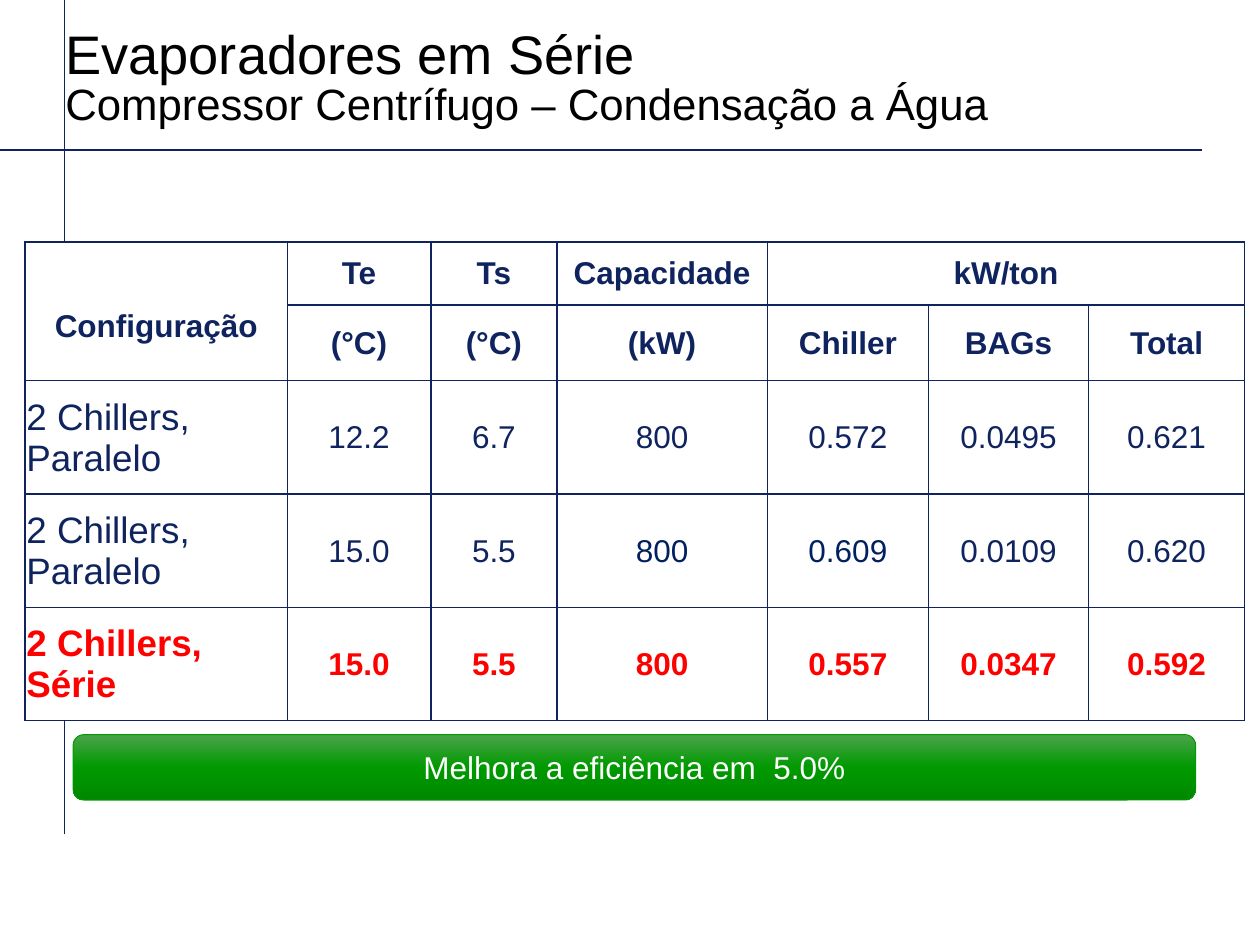
from lxml import etree
from pptx import Presentation
from pptx.dml.color import RGBColor
from pptx.enum.shapes import MSO_CONNECTOR, MSO_SHAPE
from pptx.enum.text import MSO_ANCHOR as Anchor, PP_ALIGN as Align
from pptx.oxml import parse_xml
from pptx.oxml.ns import nsdecls, qn
from pptx.util import Inches, Pt

COLORS = {
    "navy": "0F245F",
    "deep_navy": "002060",
    "red": "FF0000",
    "black": "000000",
    "white": "FFFFFF",
    "green_light": "4BA44B",
    "green": "009900",
    "green_dark": "008800",
}
FONT = "Arial"
COLUMN_WIDTHS = [2.08, 1.14, 1, 1.67, 1.28, 1.27, 1.24]
ROW_HEIGHTS = [0.5, 0.46, 0.9, 0.9, 0.9]
HEADER_ROWS = 2
ROWS = [
    ["Configuração", "Te", "Ts", "Capacidade", "kW/ton", "", ""],
    ["", "(°C)", "(°C)", "(kW)", "Chiller", "BAGs", "Total"],
    ["2 Chillers, Paralelo", "12.2", "6.7", "800", "0.572", "0.0495", "0.621"],
    ["2 Chillers, Paralelo", "15.0", "5.5", "800", "0.609", "0.0109", "0.620"],
    ["2 Chillers,\nSérie", "15.0", "5.5", "800", "0.557", "0.0347", "0.592"],
]
DEEP_NAVY_CELLS = {(3, 3), (3, 4)}


def rgb(name):
    return RGBColor.from_string(COLORS[name])


def set_font(font, size, color, bold=False):
    font.name = FONT
    font.size = Pt(size)
    font.bold = bold
    font.color.rgb = rgb(color)


def add_rule(slide, x1, y1, x2, y2):
    rule = slide.shapes.add_connector(
        MSO_CONNECTOR.STRAIGHT, Inches(x1), Inches(y1), Inches(x2), Inches(y2))
    rule.line.color.rgb = rgb("navy")
    rule.line.width = Pt(0.75)
    etree.SubElement(rule._element.spPr, qn("a:effectLst"))


def add_title(slide, heading, subheading):
    box = slide.shapes.add_textbox(Inches(0.42), Inches(0.08), Inches(7.75), Inches(1))
    frame = box.text_frame
    frame.word_wrap = True
    frame.vertical_anchor = Anchor.BOTTOM
    paragraph = frame.paragraphs[0]
    paragraph.line_spacing = 0.85
    run = paragraph.add_run()
    run.text = heading
    set_font(run.font, 31, "black")
    paragraph.add_line_break()
    run = paragraph.add_run()
    run.text = subheading
    set_font(run.font, 25, "black")


def add_borders(cell):
    properties = cell._tc.get_or_add_tcPr()
    for index, side in enumerate("LRTB"):
        properties.insert(index, parse_xml(
            f'<a:ln{side} {nsdecls("a")} w="12700"><a:solidFill>'
            f'<a:srgbClr val="{COLORS["navy"]}"/></a:solidFill></a:ln{side}>'))


def fill_cell(cell, text, size, color, bold, align):
    cell.fill.solid()
    cell.fill.fore_color.rgb = rgb("white")
    add_borders(cell)
    cell.margin_left = cell.margin_right = cell.margin_top = Inches(0.01)
    cell.margin_bottom = 0
    cell.vertical_anchor = Anchor.MIDDLE
    cell.text = text
    for paragraph in cell.text_frame.paragraphs:
        paragraph.alignment = align
        set_font(paragraph.font, size, color, bold)


def add_comparison_table(slide):
    table = slide.shapes.add_table(
        len(ROWS), len(COLUMN_WIDTHS), Inches(0.2), Inches(1.92),
        Inches(sum(COLUMN_WIDTHS)), Inches(sum(ROW_HEIGHTS))).table
    table.first_row = table.horz_banding = False
    for column, width in zip(table.columns, COLUMN_WIDTHS):
        column.width = Inches(width)
    for row, height in zip(table.rows, ROW_HEIGHTS):
        row.height = Inches(height)

    last_row = len(ROWS) - 1
    for r, values in enumerate(ROWS):
        for c, text in enumerate(values):
            is_label = r >= HEADER_ROWS and c == 0
            color = "deep_navy" if (r, c) in DEEP_NAVY_CELLS else "navy"
            fill_cell(
                table.cell(r, c), text,
                size=21 if is_label else 18,
                color="red" if r == last_row else color,
                bold=r < HEADER_ROWS or r == last_row,
                align=Align.LEFT if is_label else Align.CENTER)

    # Merged headers; the first one sits a line above its bottom edge
    table.cell(0, 4).merge(table.cell(0, 6))
    corner = table.cell(0, 0)
    corner.merge(table.cell(1, 0))
    corner.vertical_anchor = Anchor.BOTTOM
    corner.margin_bottom = Inches(0.29)


def add_banner(slide, text):
    banner = slide.shapes.add_shape(
        MSO_SHAPE.ROUNDED_RECTANGLE,
        Inches(0.58), Inches(5.83), Inches(8.91), Inches(0.52))
    banner.shadow.inherit = False
    banner.line.color.rgb = rgb("green")
    banner.line.width = Pt(0.5)

    # Three-stop vertical gradient
    stops = [(0, "green_light"), (50, "green"), (100, "green_dark")]
    stop_xml = "".join(
        f'<a:gs pos="{position * 1000}"><a:srgbClr val="{COLORS[name]}"/></a:gs>'
        for position, name in stops)
    banner._element.spPr.find(qn("a:prstGeom")).addnext(parse_xml(
        f'<a:gradFill {nsdecls("a")} rotWithShape="1"><a:gsLst>{stop_xml}</a:gsLst>'
        '<a:lin ang="5400000" scaled="0"/></a:gradFill>'))

    frame = banner.text_frame
    frame.word_wrap = True
    frame.vertical_anchor = Anchor.MIDDLE
    paragraph = frame.paragraphs[0]
    paragraph.text = text
    paragraph.alignment = Align.CENTER
    set_font(paragraph.font, 18, "white")


def main():
    presentation = Presentation()
    presentation.slide_width = Inches(10)
    presentation.slide_height = Inches(7.5)
    slide = presentation.slides.add_slide(presentation.slide_layouts[6])

    # Crossing rules behind the content
    add_rule(slide, 0.51, 6.62, 0.51, 0)
    add_rule(slide, 0, 1.19, 9.54, 1.19)

    add_title(slide, "Evaporadores em Série ",
              "Compressor Centrífugo – Condensação a Água")
    add_comparison_table(slide)
    add_banner(slide, "Melhora a eficiência em  5.0%")

    presentation.save("out.pptx")


if __name__ == "__main__":
    main()
